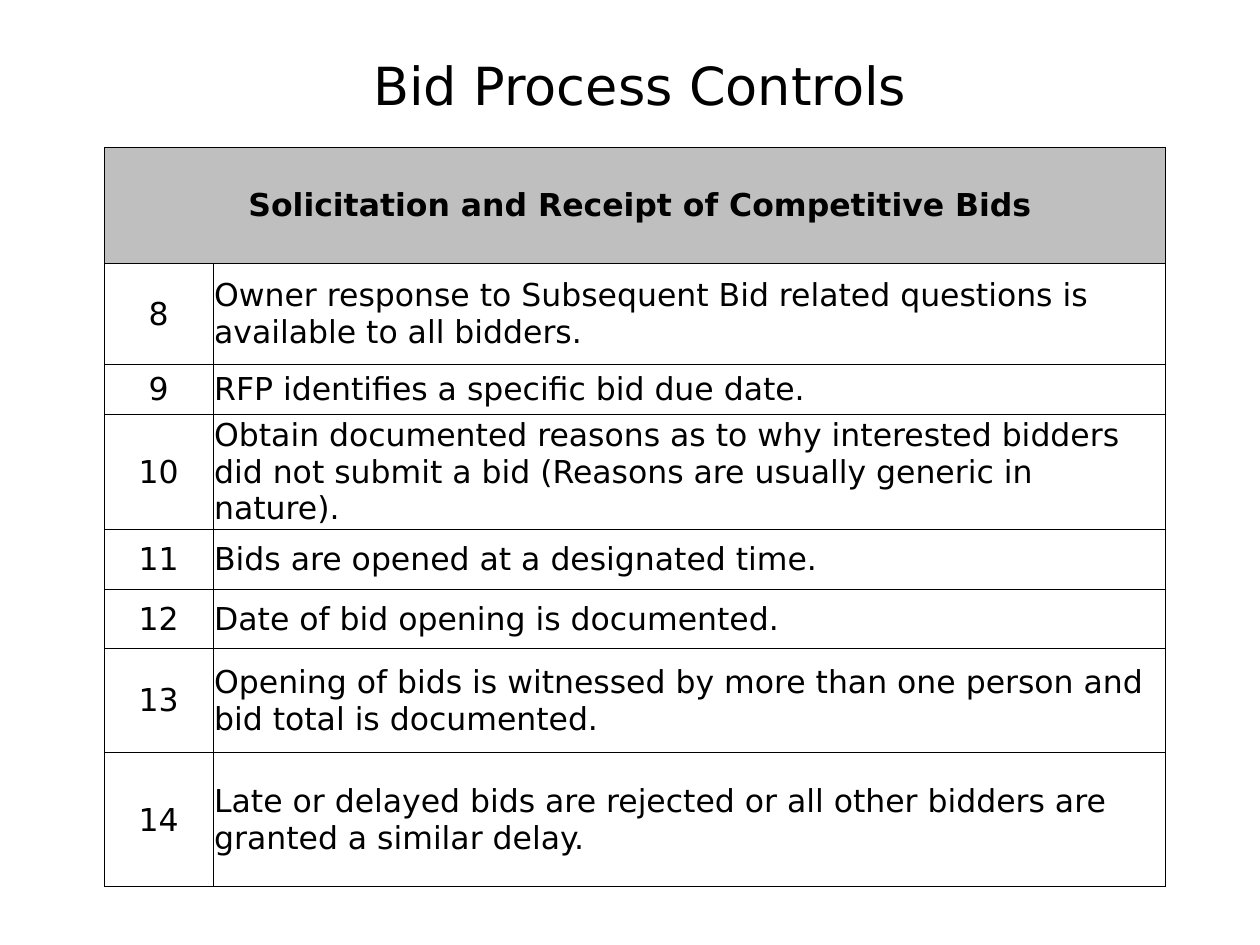
import dataclasses

import lxml.etree
import pptx
import pptx.dml.color
import pptx.enum.text
import pptx.oxml.ns
import pptx.util

Inches = pptx.util.Inches
RGB = pptx.dml.color.RGBColor
ALIGN = pptx.enum.text.PP_ALIGN
MIDDLE = pptx.enum.text.MSO_ANCHOR.MIDDLE


@dataclasses.dataclass(frozen=True)
class Theme:
    font: str = "DejaVu Sans"
    ink: str = "000000"
    header_fill: str = "BFBFBF"
    title_size: int = 30
    body_size: int = 18
    border_width: float = 0.5


class SlideBuilder:
    def __init__(self, slide, theme):
        self.slide = slide
        self.theme = theme

    def styled_text(self, frame, text, size, align, bold=False):
        frame.text = text
        paragraph = frame.paragraphs[0]
        paragraph.alignment = align
        for run in paragraph.runs:
            run.font.name = self.theme.font
            run.font.size = pptx.util.Pt(size)
            run.font.bold = bold
            run.font.color.rgb = RGB.from_string(self.theme.ink)
        return paragraph

    def title(self, text, left, top, width, height):
        heading = self.slide.shapes.title
        heading.left, heading.top = Inches(left), Inches(top)
        heading.width, heading.height = Inches(width), Inches(height)
        heading.text_frame.vertical_anchor = MIDDLE
        paragraph = self.styled_text(heading.text_frame, text,
                                     self.theme.title_size, ALIGN.CENTER)
        paragraph.line_spacing = 0.9

    def borders(self, cell):
        properties = cell._tc.get_or_add_tcPr()
        qn = pptx.oxml.ns.qn
        width = str(pptx.util.Pt(self.theme.border_width))
        for side in ("a:lnL", "a:lnR", "a:lnT", "a:lnB"):
            line = lxml.etree.SubElement(properties, qn(side), w=width)
            fill = lxml.etree.SubElement(line, qn("a:solidFill"))
            lxml.etree.SubElement(fill, qn("a:srgbClr"), val=self.theme.ink)

    def cell(self, cell, text, align, header=False):
        # The header text sits slightly right of centre
        cell.margin_left = Inches(0.09 if header else 0.01)
        cell.margin_right = cell.margin_top = Inches(0.01)
        cell.margin_bottom = 0
        cell.vertical_anchor = MIDDLE
        if header:
            cell.fill.solid()
            cell.fill.fore_color.rgb = RGB.from_string(self.theme.header_fill)
        else:
            cell.fill.background()
        self.styled_text(cell.text_frame, text, self.theme.body_size, align, header)

    def controls_table(self, heading, controls, first_number,
                       left, top, column_widths, row_heights):
        table = self.slide.shapes.add_table(
            len(row_heights), len(column_widths), Inches(left), Inches(top),
            Inches(sum(column_widths)), Inches(sum(row_heights))).table
        table.first_row = table.horz_banding = False
        for column, width in zip(table.columns, column_widths):
            column.width = Inches(width)
        for row, height in zip(table.rows, row_heights):
            row.height = Inches(height)
        for cell in table.iter_cells():
            self.borders(cell)

        # Heading across both columns
        table.cell(0, 0).merge(table.cell(0, 1))
        self.cell(table.cell(0, 0), heading, ALIGN.CENTER, header=True)

        # Numbered controls
        for row, control in enumerate(controls, start=1):
            number = str(first_number + row - 1)
            self.cell(table.cell(row, 0), number, ALIGN.CENTER)
            self.cell(table.cell(row, 1), control, ALIGN.LEFT)


CONTROLS = [
    "Owner response to Subsequent Bid related questions is available to all bidders.",
    "RFP identifies a specific bid due date.",
    "Obtain documented reasons as to why interested bidders did not submit a bid "
    "(Reasons are usually generic in nature).",
    "Bids are opened at a designated time.",
    "Date of bid opening is documented.",
    "Opening of bids is witnessed by more than one person and bid total is documented.",
    "Late or delayed bids are rejected or all other bidders are granted a similar delay.",
]


def main():
    deck = pptx.Presentation()
    deck.slide_width, deck.slide_height = Inches(10), Inches(7.5)
    title_only = deck.slide_layouts[5]
    builder = SlideBuilder(deck.slides.add_slide(title_only), Theme())

    builder.title("Bid Process Controls", 1.08, 0.33, 8, 0.75)
    builder.controls_table(
        "Solicitation and Receipt of Competitive Bids", CONTROLS, 8,
        left=0.83, top=1.17, column_widths=[0.86, 7.56],
        row_heights=[0.92, 0.8, 0.4, 0.91, 0.48, 0.47, 0.82, 1.07])

    deck.save("out.pptx")


if __name__ == "__main__":
    main()
